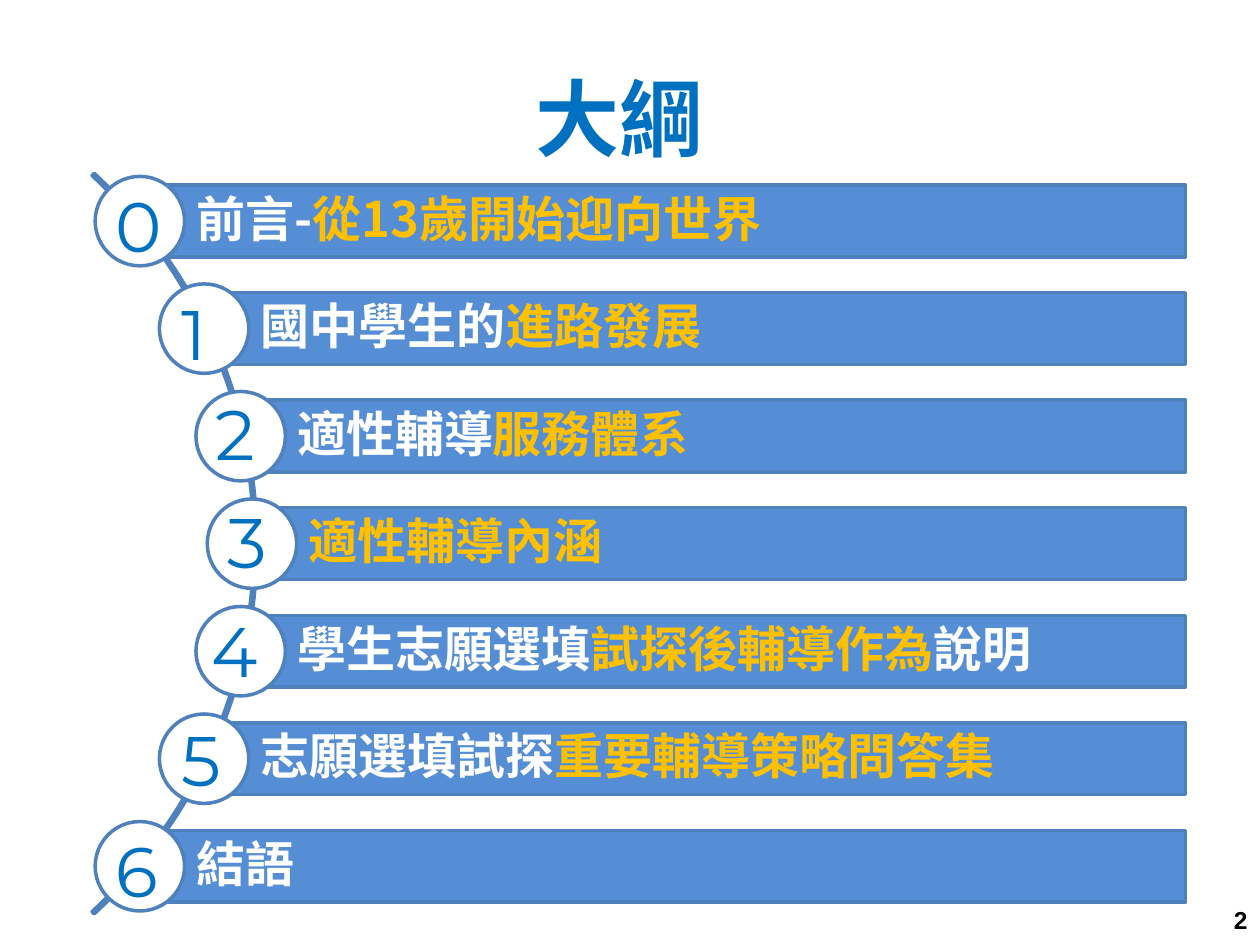
from lxml.etree import SubElement
from pptx import Presentation
from pptx.dml.color import RGBColor
from pptx.enum.shapes import MSO_SHAPE
from pptx.enum.text import MSO_ANCHOR, MSO_AUTO_SIZE, PP_ALIGN
from pptx.oxml.ns import qn
from pptx.util import Inches, Pt

STEP = 5.12 / 6
SIZE = 0.71
RIGHT = 9.41


def paint(item, code):
    item.rgb = RGBColor.from_string(code)


def write(frame, runs, size, face, bold=False, align=PP_ALIGN.LEFT,
          line=None, after=None):
    para = frame.paragraphs[0]
    para.alignment = align
    para.line_spacing = line
    if after is not None:
        para.space_after = Pt(after)
    for text, code in runs:
        run = para.add_run()
        run.text = text
        font = run.font
        font.size, font.bold, font.name = Pt(size), bold, face
        paint(font.color, code)
        SubElement(run._r.get_or_add_rPr(), qn("a:ea"), typeface=face)


class Deck:
    blue, edge, bar_fill = "0070C0", "4F81BD", "558ED5"
    white, gold, black = "FFFFFF", "FFC000", "000000"
    cjk, digit, plain = "Noto Sans CJK SC", "Montserrat", "Arial"

    def __init__(self):
        self.file = Presentation()
        self.file.slide_width = Inches(10)
        self.file.slide_height = Inches(7.5)
        self.slide = self.file.slides.add_slide(self.file.slide_layouts[6])

    def shape(self, kind, box, fill=None):
        item = self.slide.shapes.add_shape(kind, *map(Inches, box))
        item.shadow.inherit = False
        if fill:
            item.fill.solid()
            paint(item.fill.fore_color, fill)
        else:
            item.fill.background()
        paint(item.line.color, self.edge)
        item.line.width = Pt(2)
        return item

    def label(self, box, text, size, face, code, wrap=True,
              anchor=MSO_ANCHOR.TOP, **style):
        frame = self.slide.shapes.add_textbox(*map(Inches, box)).text_frame
        frame.word_wrap = wrap
        frame.vertical_anchor = anchor
        if not wrap:
            frame.auto_size = MSO_AUTO_SIZE.SHAPE_TO_FIT_TEXT
        write(frame, [(text, code)], size, face, **style)

    def arc(self, box):
        item = self.shape(MSO_SHAPE.BLOCK_ARC, box)
        for i, value in enumerate((189, 27, 0.003)):
            item.adjustments[i] = value

    def bar(self, left, top, runs):
        box = (left, top, RIGHT - left, 0.57)
        frame = self.shape(MSO_SHAPE.RECTANGLE, box, self.bar_fill).text_frame
        frame.word_wrap = True
        frame.vertical_anchor = MSO_ANCHOR.MIDDLE
        frame.margin_left = Inches(0.45)
        frame.margin_right = Inches(0.08)
        frame.margin_top = frame.margin_bottom = Inches(0.08)
        write(frame, runs, 28, self.cjk, bold=True, line=0.9, after=9.8)

    def disc(self, left, top):
        box = (left - SIZE / 2, top - 0.07, SIZE, SIZE)
        self.shape(MSO_SHAPE.OVAL, box, self.white)


def main():
    deck = Deck()
    white, gold = deck.white, deck.gold
    rows = [
        (1.11, 0.82, 1.40, [("前言-", white), ("從13歲開始迎向世界", gold)]),
        (1.62, 1.34, 2.26, [("國中學生的", white), ("進路發展", gold)]),
        (1.91, 1.61, 3.05, [("適性輔導", white), ("服務體系", gold)]),
        (2.00, 1.71, 3.91, [("適性輔導內涵", gold)]),
        (1.91, 1.58, 4.77, [("學生志願選填", white),
                            ("試探後輔導作為", gold), ("說明", white)]),
        (1.62, 1.34, 5.64, [("志願選填試探", white),
                            ("重要輔導策略問答集", gold)]),
        (1.11, 0.82, 6.52, [("結語", white)]),
    ]
    deck.label((0.35, 0.4, 9.13, 0.99), "大綱", 48, deck.cjk, deck.blue,
               bold=True, align=PP_ALIGN.CENTER, line=1.1)
    deck.label((7.67, 7.1, 2.33, 0.4), "2", 14, deck.plain, deck.black,
               anchor=MSO_ANCHOR.MIDDLE, bold=True, align=PP_ALIGN.RIGHT)
    deck.arc((-6.42, 0.23, 8.46, 8.17))
    for i, (left, _, _, runs) in enumerate(rows):
        top = 1.47 + i * STEP
        deck.bar(left, top, runs)
        deck.disc(left, top)
    for i, (_, left, top, _) in enumerate(rows):
        deck.label((left, top, 0.58, 0.77), str(i), 40, deck.digit,
                   deck.blue, wrap=False)
    deck.file.save("out.pptx")


if __name__ == "__main__":
    main()
